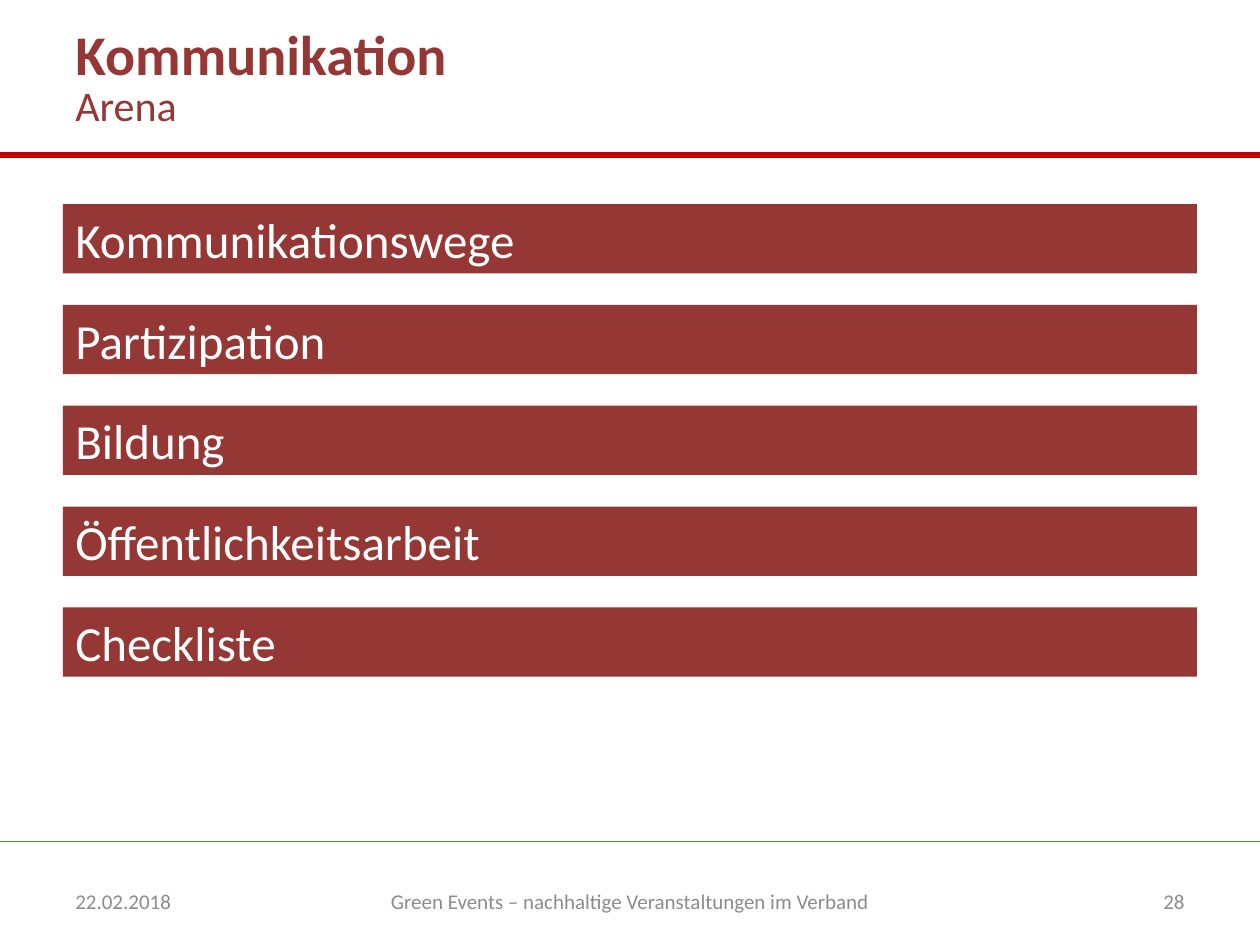
from lxml import etree
from pptx import Presentation
from pptx.dml.color import RGBColor
from pptx.enum.shapes import MSO_CONNECTOR, MSO_SHAPE
from pptx.enum.text import MSO_ANCHOR, PP_ALIGN
from pptx.oxml.ns import qn
from pptx.util import Inches, Pt

LEFT, CENTER, RIGHT = PP_ALIGN.LEFT, PP_ALIGN.CENTER, PP_ALIGN.RIGHT
MIDDLE = MSO_ANCHOR.MIDDLE
RECTANGLE = MSO_SHAPE.RECTANGLE
STRAIGHT = MSO_CONNECTOR.STRAIGHT

SLIDE_WIDTH, SLIDE_HEIGHT = 10, 7.5
MARGIN = 0.5
MAROON, RED, GREEN = "953735", "C00000", "4F8D2C"
GRAY, WHITE = "8C8C8C", "FFFFFF"

TOPICS = ["Kommunikationswege", "Partizipation", "Bildung",
          "Öffentlichkeitsarbeit", "Checkliste"]
TOPIC_TOP, TOPIC_HEIGHT, TOPIC_STEP = 1.62, 0.55, 0.8

TITLE = {"size": Pt(32), "bold": True}
SUBTITLE = {"size": Pt(24)}
TOPIC = {"size": Pt(28)}
FOOTER = {"size": Pt(12)}
FOOTER_TOP, FOOTER_HEIGHT = 6.95, 0.4


def rgb(color):
    return RGBColor.from_string(color)


def write_text(shape, text, color, font_format, alignment=LEFT):
    frame = shape.text_frame
    frame.word_wrap = True
    frame.vertical_anchor = MIDDLE
    paragraph = frame.paragraphs[0]
    paragraph.text = text
    paragraph.alignment = alignment
    font = paragraph.runs[0].font
    font.color.rgb = rgb(color)
    for name, value in {"name": "Calibri", **font_format}.items():
        setattr(font, name, value)


def add_label(slide, box, text, color, font_format, alignment=LEFT):
    shape = slide.shapes.add_textbox(*map(Inches, box))
    write_text(shape, text, color, font_format, alignment)


def add_topic_bar(slide, top, text):
    shape = slide.shapes.add_shape(
        RECTANGLE, Inches(MARGIN), Inches(top),
        Inches(SLIDE_WIDTH - 2 * MARGIN), Inches(TOPIC_HEIGHT))
    shape.shadow.inherit = False
    shape.fill.solid()
    shape.fill.fore_color.rgb = rgb(MAROON)
    shape.line.fill.background()
    write_text(shape, text, WHITE, TOPIC)


def add_rule(slide, top, color, width):
    rule = slide.shapes.add_connector(
        STRAIGHT, 0, Inches(top), Inches(SLIDE_WIDTH), Inches(top))
    rule.line.color.rgb = rgb(color)
    rule.line.width = Pt(width)
    etree.SubElement(rule._element.spPr, qn("a:effectLst"))


def add_footer(slide, left, width, text, alignment):
    box = (left, FOOTER_TOP, width, FOOTER_HEIGHT)
    add_label(slide, box, text, GRAY, FOOTER, alignment)


def main():
    presentation = Presentation()
    presentation.slide_width = Inches(SLIDE_WIDTH)
    presentation.slide_height = Inches(SLIDE_HEIGHT)
    slide = presentation.slides.add_slide(presentation.slide_layouts[6])

    add_rule(slide, 6.68, GREEN, 0.75)
    add_rule(slide, 1.23, RED, 3)
    add_label(slide, (MARGIN, 0.01, 6.67, 0.82), "Kommunikation", MAROON, TITLE)
    add_label(slide, (MARGIN, 0.6, 6.67, 0.47), "Arena", MAROON, SUBTITLE)

    for index, topic in enumerate(TOPICS):
        add_topic_bar(slide, TOPIC_TOP + index * TOPIC_STEP, topic)

    add_footer(slide, MARGIN, 2.33, "22.02.2018", LEFT)
    add_footer(slide, 2.99, 4.02,
               "Green Events – nachhaltige Veranstaltungen im Verband", CENTER)
    add_footer(slide, 7.17, 2.33, "28", RIGHT)

    presentation.save("out.pptx")


if __name__ == "__main__":
    main()
